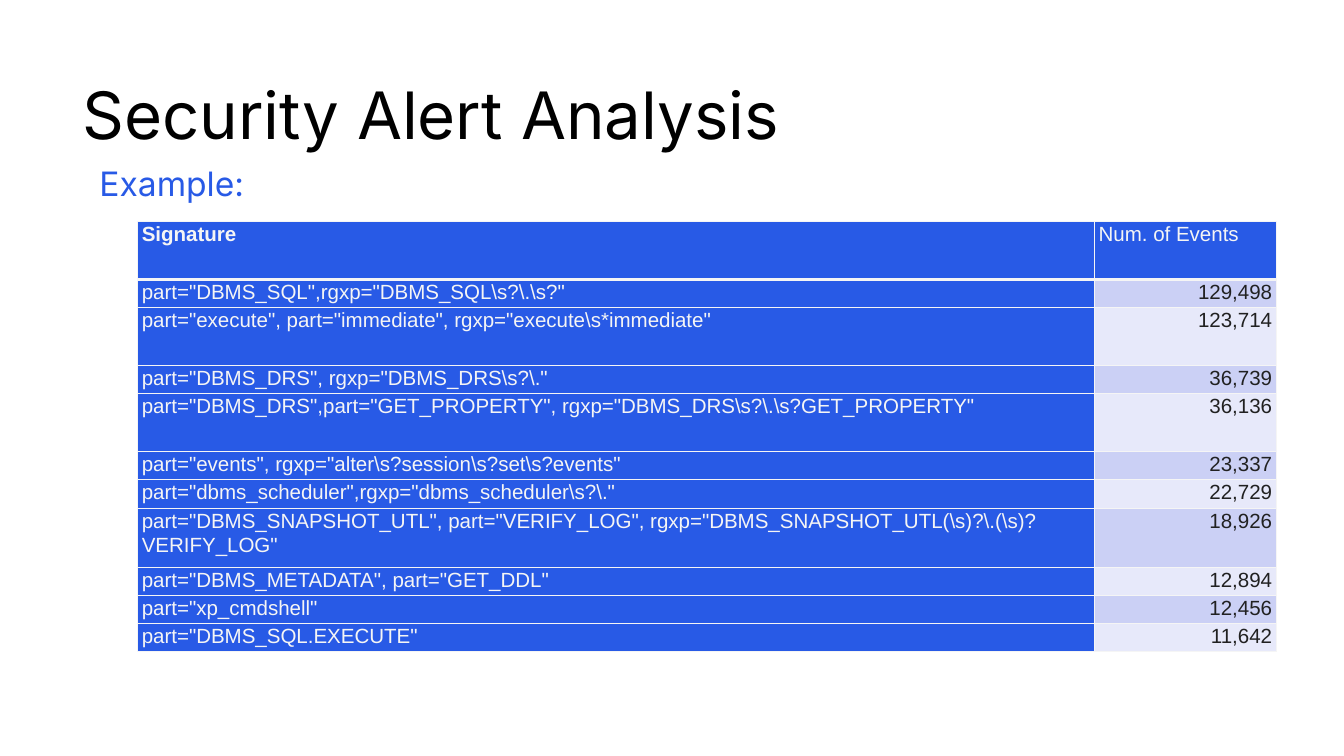
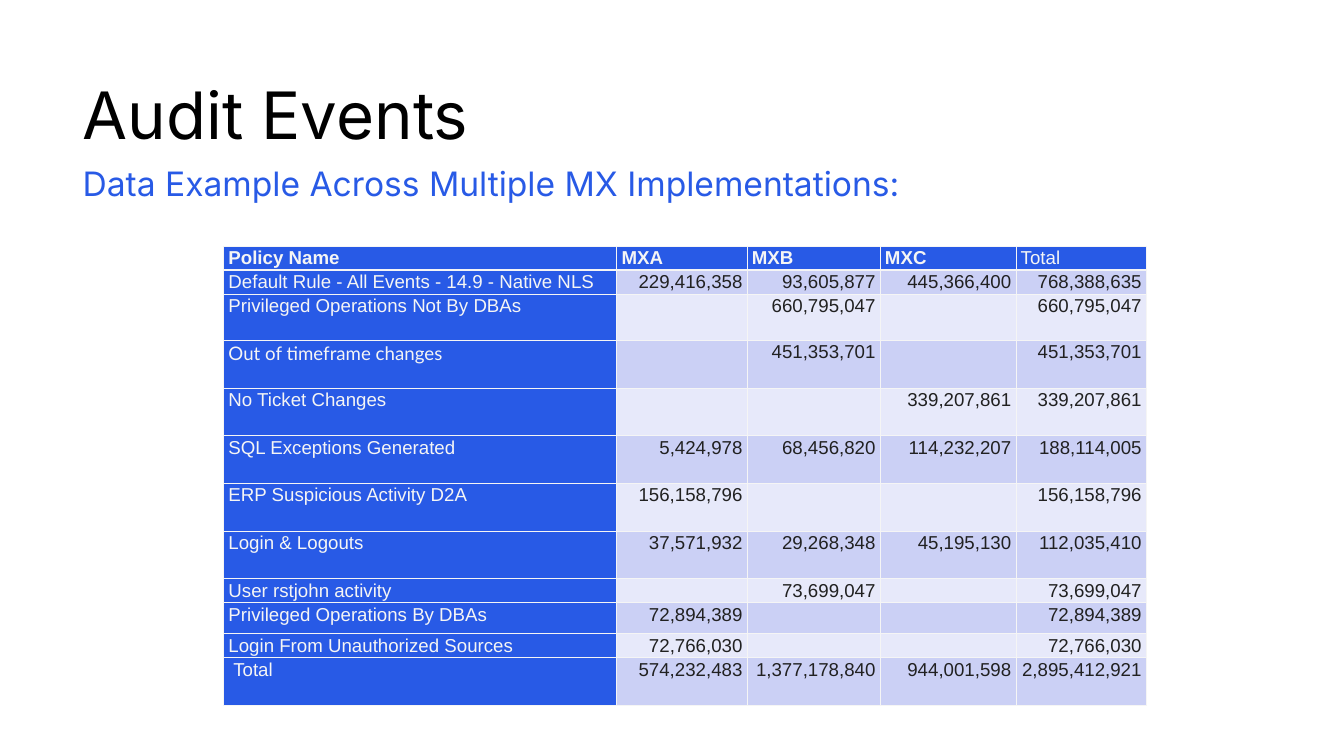
"""Build two slides with tables of security alerts and audit events."""
from dataclasses import dataclass

from lxml.etree import SubElement
from pptx import Presentation
from pptx.dml.color import RGBColor as Color
from pptx.enum.text import MSO_ANCHOR as Anchor, PP_ALIGN as Align
from pptx.oxml.ns import qn
from pptx.util import Pt

PX = 9144
EMU_PER_POINT = 12700


@dataclass(frozen=True)
class Theme:
    """Colours, fonts and type sizes shared by the slides."""
    title: str = "000000"
    accent: str = "285AE6"
    light: str = "F5F5F5"
    number: str = "212121"
    bands: tuple = ("CBD0F5", "E7E9FA")
    heading_font: str = "Inter"
    table_font: str = "Arial"
    title_size: int = 70
    subtitle_size: int = 36


class SlideBuilder:
    """Holds the theme and the current slide."""

    def __init__(self, deck, theme):
        """Keep the deck and the theme."""
        self.deck, self.theme, self.page = deck, theme, None

    def add_page(self, title, subtitle, indent=0):
        """Start a page with its title and subtitle."""
        theme = self.theme
        self.page = self.deck.slides.add_slide(self.deck.slide_layouts[6])
        self.page.background.fill.solid()
        self.page.background.fill.fore_color.rgb = Color.from_string("FFFFFF")
        self.add_heading(title, 124, 125, theme.title_size, theme.title)
        self.add_heading(subtitle, 249, 87, theme.subtitle_size, theme.accent, indent)

    def add_heading(self, text, top, height, size, color, indent=0):
        """Place one line of heading text."""
        box = self.page.shapes.add_textbox(123 * PX, top * PX, 1754 * PX, height * PX)
        frame = box.text_frame
        frame.word_wrap = True
        frame.margin_left = frame.margin_right = 0
        frame.margin_top = frame.margin_bottom = 0
        frame.text = text
        para = frame.paragraphs[0]
        para.line_spacing = 0.9
        if indent:
            properties = para._p.get_or_add_pPr()
            properties.set("marL", str(2 * indent * PX))
            properties.set("indent", str(-indent * PX))
        self.style_text(para, self.theme.heading_font, size, color)

    def style_text(self, para, font, size, color, bold=False):
        """Format every run of a paragraph."""
        for span in para.runs:
            span.font.name, span.font.size, span.font.bold = font, Pt(size), bold
            span.font.color.rgb = Color.from_string(color)

    def add_table(self, left, top, widths, heights, rows, size, fonts=None):
        """Place a table with a header row, a label column and banded numbers."""
        theme, fonts = self.theme, fonts or {}
        frame = self.page.shapes.add_table(
            len(rows), len(widths), left * PX, top * PX,
            sum(widths) * PX, sum(heights) * PX)
        table = frame.table
        for column, width in zip(table.columns, widths):
            column.width = width * PX
        for row, height in zip(table.rows, heights):
            row.height = height * PX
        for r, values in enumerate(rows):
            for c, text in enumerate(values):
                header, number = r == 0, r > 0 and c > 0
                fill = theme.bands[(r - 1) % 2] if number else theme.accent
                cell = table.cell(r, c)
                self.style_cell(cell, fill, r)
                if not text:
                    continue
                cell.text_frame.text = text
                para = cell.text_frame.paragraphs[0]
                para.line_spacing = 1.07
                para.alignment = Align.RIGHT if number else Align.LEFT
                self.style_text(para, fonts.get(text, theme.table_font), size,
                                theme.number if number else theme.light,
                                header and c < len(widths) - 1)

    def style_cell(self, cell, fill, row):
        """Set the margins, fill and borders of a cell."""
        cell.margin_left = cell.margin_right = 7 * PX
        cell.margin_top = cell.margin_bottom = 0
        cell.vertical_anchor = Anchor.TOP
        cell.fill.solid()
        cell.fill.fore_color.rgb = Color.from_string(fill)
        properties = cell._tc.get_or_add_tcPr()
        sides = {"lnL": 1, "lnR": 1, "lnT": 3 if row == 1 else 1, "lnB": 1 if row else 3}
        for position, (side, points) in enumerate(sides.items()):
            line = SubElement(properties, qn(f"a:{side}"), w=str(points * EMU_PER_POINT))
            solid = SubElement(line, qn("a:solidFill"))
            SubElement(solid, qn("a:srgbClr"), val=self.theme.light)
            properties.insert(position, line)


ALERTS = [
    ("Signature", "Num. of Events"),
    (r'part="DBMS_SQL",rgxp="DBMS_SQL\s?\.\s?"', "129,498"),
    (r'part="execute", part="immediate", rgxp="execute\s*immediate"', "123,714"),
    (r'part="DBMS_DRS", rgxp="DBMS_DRS\s?\."', "36,739"),
    (r'part="DBMS_DRS",part="GET_PROPERTY", rgxp="DBMS_DRS\s?\.\s?GET_PROPERTY"', "36,136"),
    (r'part="events", rgxp="alter\s?session\s?set\s?events"', "23,337"),
    (r'part="dbms_scheduler",rgxp="dbms_scheduler\s?\."', "22,729"),
    (r'part="DBMS_SNAPSHOT_UTL", part="VERIFY_LOG", '
     r'rgxp="DBMS_SNAPSHOT_UTL(\s)?\.(\s)?VERIFY_LOG"', "18,926"),
    ('part="DBMS_METADATA", part="GET_DDL"', "12,894"),
    ('part="xp_cmdshell"', "12,456"),
    ('part="DBMS_SQL.EXECUTE"', "11,642"),
]

AUDIT_EVENTS = [
    ("Policy Name", "MXA", "MXB", "MXC", "Total"),
    ("Default Rule - All Events - 14.9 - Native NLS",
     "229,416,358", "93,605,877", "445,366,400", "768,388,635"),
    ("Privileged Operations Not By DBAs", "", "660,795,047", "", "660,795,047"),
    ("Out of timeframe changes", "", "451,353,701", "", "451,353,701"),
    ("No Ticket Changes", "", "", "339,207,861", "339,207,861"),
    ("SQL Exceptions Generated", "5,424,978", "68,456,820", "114,232,207", "188,114,005"),
    ("ERP Suspicious Activity D2A", "156,158,796", "", "", "156,158,796"),
    ("Login & Logouts", "37,571,932", "29,268,348", "45,195,130", "112,035,410"),
    ("User rstjohn activity", "", "73,699,047", "", "73,699,047"),
    ("Privileged Operations By DBAs", "72,894,389", "", "", "72,894,389"),
    ("Login From Unauthorized Sources", "72,766,030", "", "", "72,766,030"),
    (" Total", "574,232,483", "1,377,178,840", "944,001,598", "2,895,412,921"),
]


def main():
    """Build both slides and save the deck."""
    deck = Presentation()
    deck.slide_width, deck.slide_height = 2000 * PX, 1125 * PX
    builder = SlideBuilder(deck, Theme())

    builder.add_page("Security Alert Analysis", "Example:", indent=25)
    alert_heights = [86, 42, 86, 42, 86, 42, 42, 88, 42, 42, 42]
    builder.add_table(204, 330, [1424, 272], alert_heights, ALERTS, 22)

    builder.add_page("Audit Events", "Data Example Across Multiple MX Implementations:")
    audit_heights = [34, 34, 69, *[71] * 5, 34, 46, 34, 71]
    builder.add_table(333, 366, [585, 194, 198, 202, 194], audit_heights, AUDIT_EVENTS, 20,
                      fonts={"Out of timeframe changes": "Lato"})
    deck.save("out.pptx")


if __name__ == "__main__":
    main()
